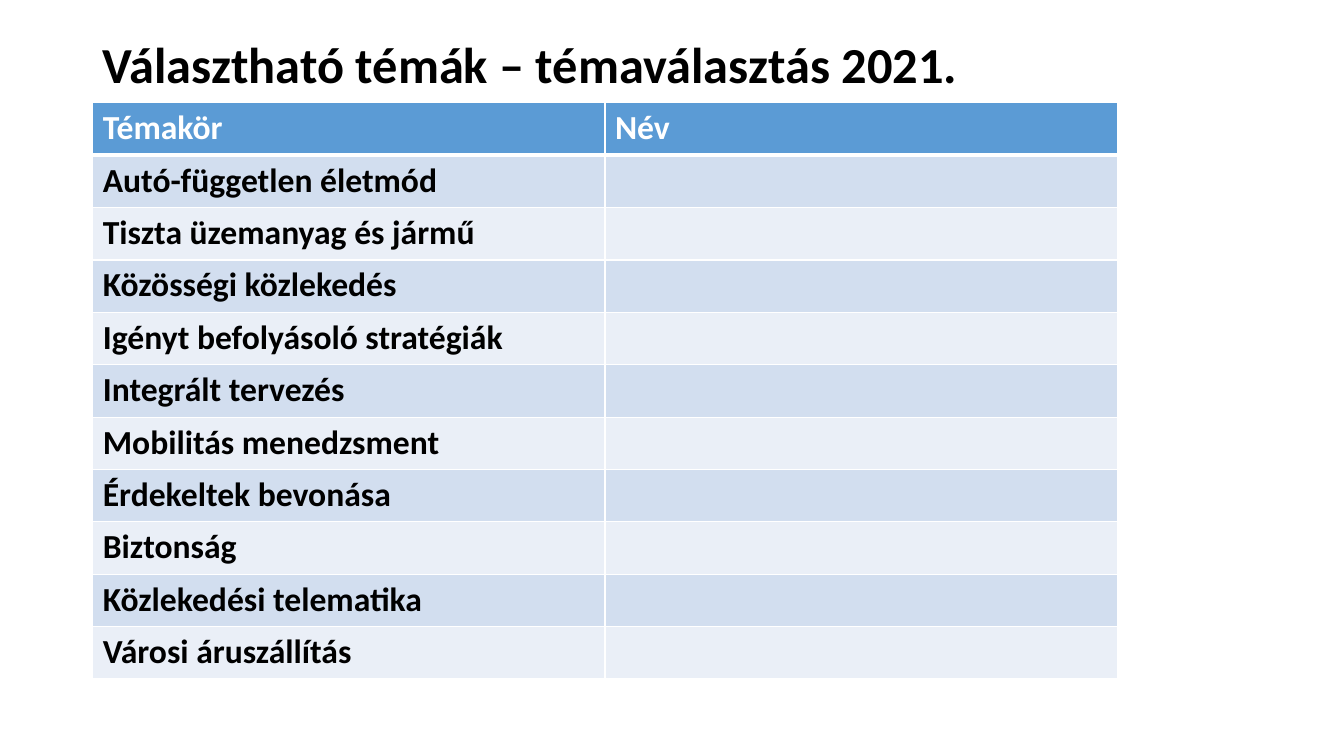
from dataclasses import dataclass

import lxml.etree
import pptx
import pptx.dml.color
import pptx.enum.text
import pptx.oxml.ns
import pptx.slide
import pptx.table
import pptx.text.text
import pptx.util

Inches = pptx.util.Inches
RGBColor = pptx.dml.color.RGBColor

BLACK = RGBColor(0x00, 0x00, 0x00)
WHITE = RGBColor(0xFF, 0xFF, 0xFF)
HEADER_BLUE = RGBColor(0x5B, 0x9B, 0xD5)
BAND_DARK = RGBColor(0xD2, 0xDE, 0xEF)
BAND_LIGHT = RGBColor(0xEA, 0xEF, 0xF7)

LEFT = Inches(0.92)
COLUMN_WIDTH = Inches(5.08)
ROW_HEIGHT = Inches(0.52)

TOPICS = [
    "Autó-független életmód",
    "Tiszta üzemanyag és jármű",
    "Közösségi közlekedés",
    "Igényt befolyásoló stratégiák",
    "Integrált tervezés",
    "Mobilitás menedzsment",
    "Érdekeltek bevonása",
    "Biztonság",
    "Közlekedési telematika",
    "Városi áruszállítás",
]


@dataclass(frozen=True)
class TopicRow:
    topic: str
    student: str
    fill: RGBColor
    text_color: RGBColor = BLACK
    top_line: float = 1
    bottom_line: float = 1


def topic_rows() -> list[TopicRow]:
    """Header row followed by the topics in alternating bands."""
    rows = [TopicRow("Témakör", "Név", HEADER_BLUE, WHITE, bottom_line=3)]
    for index, topic in enumerate(TOPICS):
        band = BAND_LIGHT if index % 2 else BAND_DARK
        rows.append(TopicRow(topic, "", band, top_line=1 if index else 3))
    return rows


def set_font(paragraph: pptx.text.text._Paragraph, size: float, color: RGBColor) -> None:
    font = paragraph.font
    font.name = "Calibri"
    font.size = pptx.util.Pt(size)
    font.bold = True
    font.color.rgb = color


def add_borders(cell: pptx.table._Cell, row: TopicRow) -> None:
    qn = pptx.oxml.ns.qn
    properties = cell._tc.get_or_add_tcPr()
    widths = {"lnL": 1, "lnR": 1, "lnT": row.top_line, "lnB": row.bottom_line}
    for side, width in widths.items():
        line = lxml.etree.SubElement(properties, qn(f"a:{side}"), w=str(pptx.util.Pt(width)))
        line_fill = lxml.etree.SubElement(line, qn("a:solidFill"))
        lxml.etree.SubElement(line_fill, qn("a:srgbClr"), val=str(WHITE))


def fill_cell(cell: pptx.table._Cell, text: str, row: TopicRow) -> None:
    add_borders(cell, row)
    cell.fill.solid()
    cell.fill.fore_color.rgb = row.fill
    cell.text = text
    set_font(cell.text_frame.paragraphs[0], 24, row.text_color)


def add_title(slide: pptx.slide.Slide) -> None:
    title = slide.shapes.add_textbox(LEFT, Inches(0.3), Inches(11.5), Inches(0.73))
    frame = title.text_frame
    frame.word_wrap = True
    frame.vertical_anchor = pptx.enum.text.MSO_ANCHOR.MIDDLE
    paragraph = frame.paragraphs[0]
    paragraph.text = "Választható témák – témaválasztás 2021."
    paragraph.line_spacing = 0.9
    set_font(paragraph, 36, BLACK)


def add_topic_table(slide: pptx.slide.Slide) -> None:
    rows = topic_rows()
    table = slide.shapes.add_table(
        len(rows), 2, LEFT, Inches(1.02), 2 * COLUMN_WIDTH, len(rows) * ROW_HEIGHT
    ).table
    for table_row, row in zip(table.rows, rows):
        for cell, text in zip(table_row.cells, (row.topic, row.student)):
            fill_cell(cell, text, row)


def main() -> None:
    presentation = pptx.Presentation()
    presentation.slide_width = Inches(13.33)
    presentation.slide_height = Inches(7.5)
    slide = presentation.slides.add_slide(presentation.slide_layouts[6])
    add_title(slide)
    add_topic_table(slide)
    presentation.save("out.pptx")


if __name__ == "__main__":
    main()
